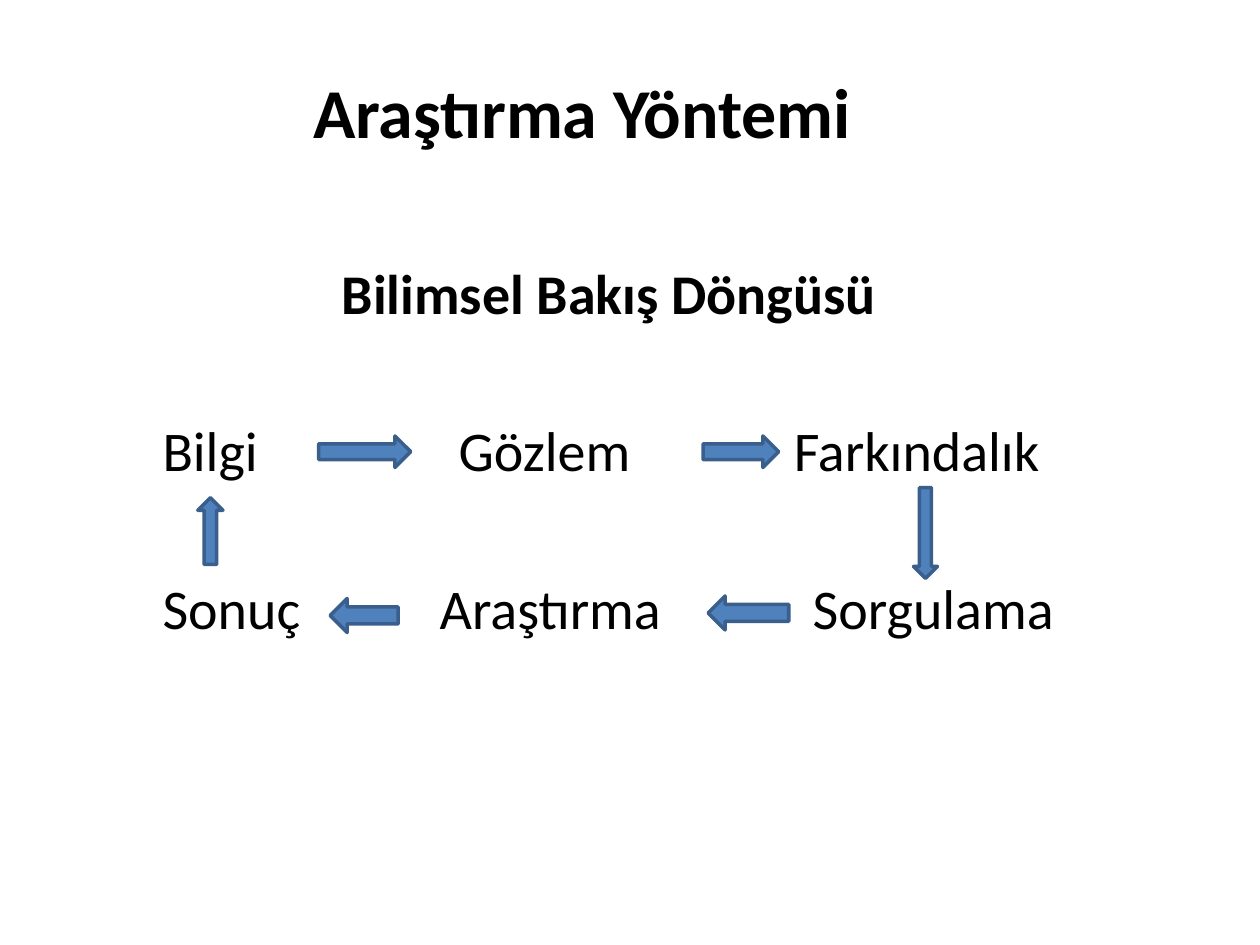
import pptx
import pptx.dml.color
import pptx.enum.shapes
import pptx.enum.text
import pptx.oxml.ns
import pptx.util
from lxml import etree

Inches, Pt = pptx.util.Inches, pptx.util.Pt
RGB = pptx.dml.color.RGBColor.from_string
Align = pptx.enum.text.PP_ALIGN
Shape = pptx.enum.shapes.MSO_SHAPE

THEME = {
    "font": "Calibri", "text": "000000",
    "fill": "4F81BD", "line": "3A5F8C", "line_width": 2,
    "title_size": 40, "body_size": 32,
}


def place(box, left, top, width, height):
    bounds = {"left": left, "top": top, "width": width, "height": height}
    for name, value in bounds.items():
        setattr(box, name, Inches(value))


def write(para, text, size, bold, align):
    para.alignment = align
    span = para.add_run()
    span.text = text
    font_format = {"name": THEME["font"], "size": Pt(size), "bold": bold}
    for name, value in font_format.items():
        setattr(span.font, name, value)
    span.font.color.rgb = RGB(THEME["text"])


deck = pptx.Presentation()
deck.slide_width, deck.slide_height = Inches(10), Inches(7.5)
page = deck.slides.add_slide(deck.slide_layouts[1])

# Title
title = page.shapes.title
place(title, 0.31, 0.15, 8.62, 1.45)
title.text_frame.vertical_anchor = pptx.enum.text.MSO_ANCHOR.MIDDLE
write(title.text_frame.paragraphs[0], "Araştırma Yöntemi",
      THEME["title_size"], True, Align.CENTER)

# Heading of the cycle
body = page.placeholders[1]
place(body, 0.36, 2, 8.95, 4.76)
body.text_frame.auto_size = pptx.enum.text.MSO_AUTO_SIZE.NONE
heading = body.text_frame.paragraphs[0]
write(heading, "Bilimsel Bakış Döngüsü", THEME["body_size"], True, Align.CENTER)
heading.space_before = Pt(0)
properties = heading._p.get_or_add_pPr()
for name in ("marL", "indent"):
    properties.set(name, "0")
etree.SubElement(properties, pptx.oxml.ns.qn("a:buNone"))

# Steps of the cycle, in two rows
rows = [
    [("Bilgi", 1.29), ("Gözlem", 3.64), ("Farkındalık", 6.3)],
    [("Sonuç", 1.29), ("Araştırma", 3.49), ("Sorgulama", 6.45)],
]
for index, row in enumerate(rows):
    for word, left in row:
        box = page.shapes.add_textbox(
            Inches(left), Inches(3.3 + 1.25 * index), Inches(2.1), Inches(0.54))
        frame = box.text_frame
        frame.word_wrap = True
        for side in ("left", "top", "right", "bottom"):
            setattr(frame, f"margin_{side}", 0)
        write(frame.paragraphs[0], word, THEME["body_size"], False, Align.LEFT)

# Arrows, clockwise round the cycle
arrows = [
    (Shape.RIGHT_ARROW, 2.53, 3.46, 0.73, 0.25),
    (Shape.RIGHT_ARROW, 5.58, 3.46, 0.6, 0.25),
    (Shape.DOWN_ARROW, 7.25, 3.87, 0.19, 0.72),
    (Shape.LEFT_ARROW, 5.62, 4.73, 0.64, 0.27),
    (Shape.LEFT_ARROW, 2.62, 4.75, 0.54, 0.27),
    (Shape.UP_ARROW, 1.57, 3.95, 0.2, 0.53),
]
for kind, *bounds in arrows:
    arrow = page.shapes.add_shape(kind, *map(Inches, bounds))
    arrow.shadow.inherit = False
    arrow.fill.solid()
    arrow.fill.fore_color.rgb = RGB(THEME["fill"])
    arrow.line.color.rgb = RGB(THEME["line"])
    arrow.line.width = Pt(THEME["line_width"])

deck.save("out.pptx")
